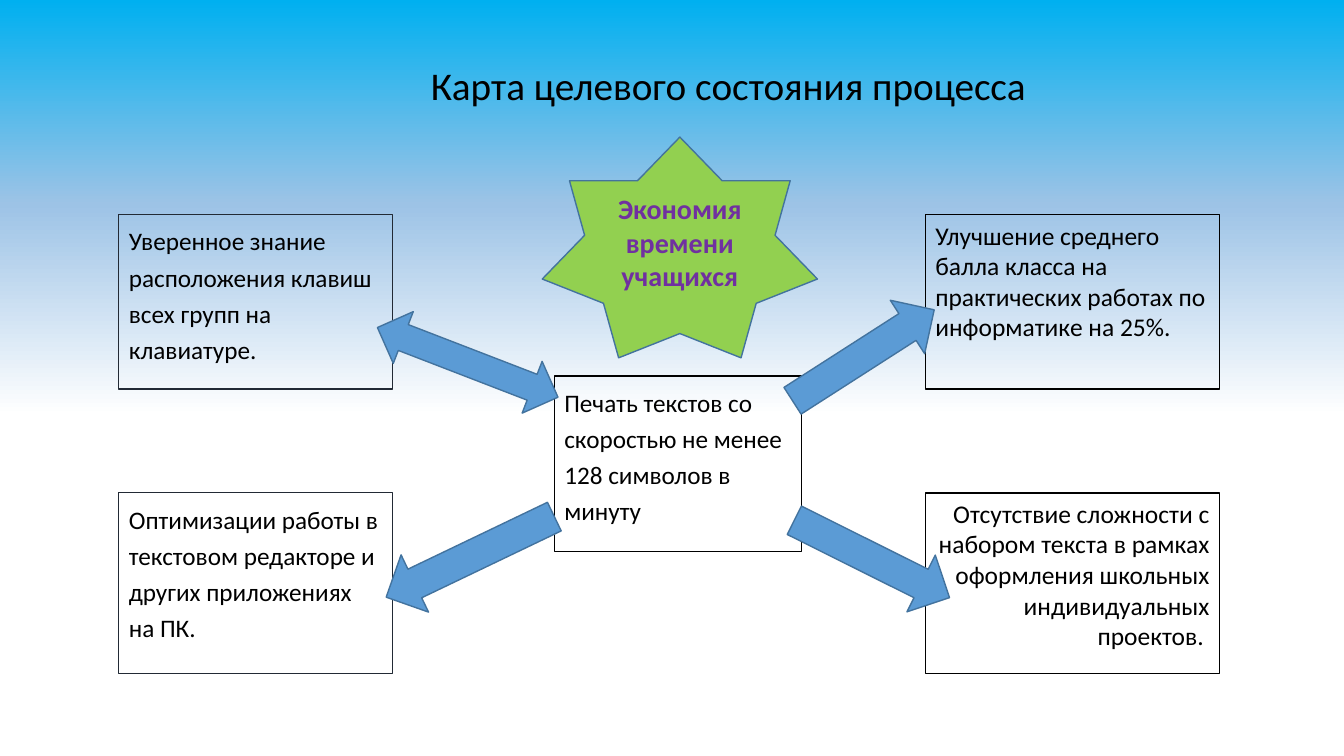
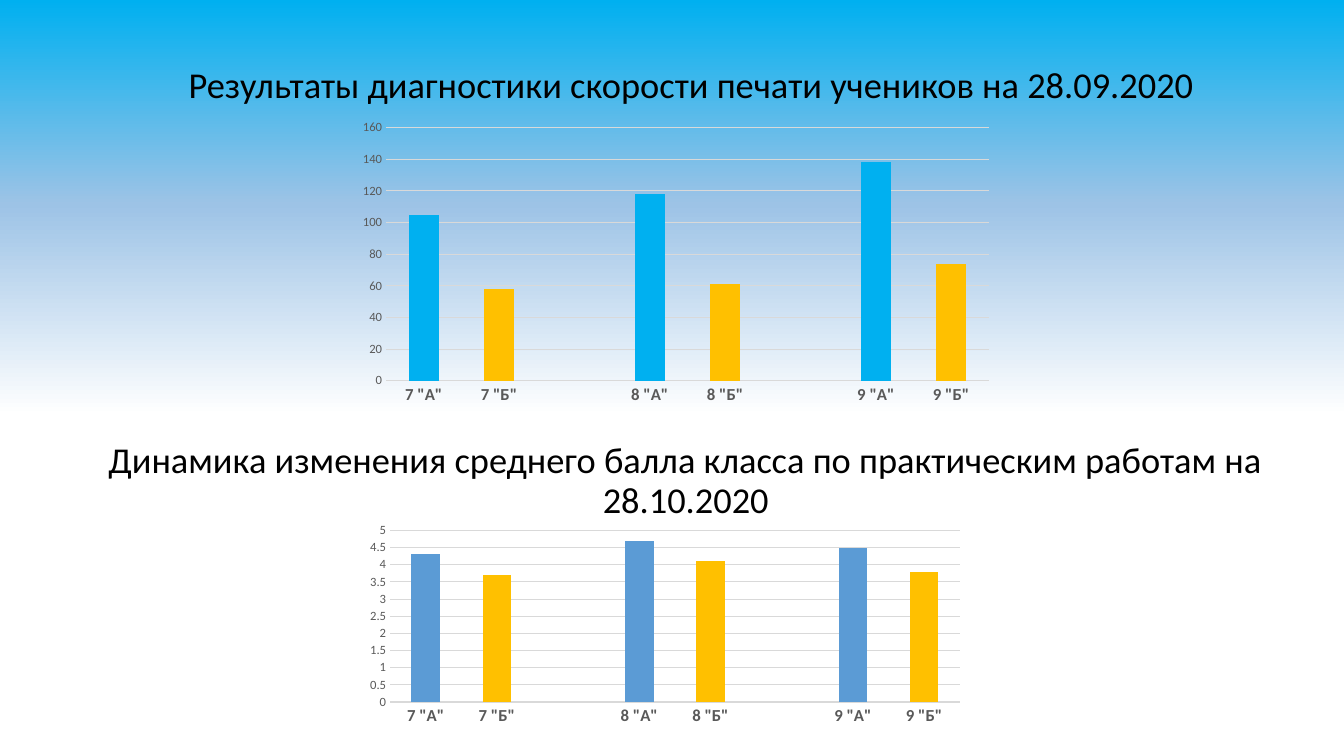
from dataclasses import dataclass

from lxml.etree import SubElement
from pptx import Presentation
from pptx.chart.data import CategoryChartData
from pptx.dml.color import RGBColor
from pptx.enum.chart import XL_CHART_TYPE as ChartType, XL_TICK_MARK as TickMark
from pptx.enum.shapes import MSO_SHAPE as Preset
from pptx.enum.text import MSO_ANCHOR as Anchor, MSO_AUTO_SIZE as AutoSize, PP_ALIGN as Align
from pptx.oxml.ns import qn
from pptx.util import Inches, Pt


@dataclass(frozen=True)
class Theme:
    font: str = "Calibri"
    black: str = "000000"
    navy: str = "222A35"
    sky: str = "00B0F0"
    blue: str = "5B9BD5"
    blue_edge: str = "43739E"
    green: str = "92D050"
    purple: str = "7030A0"
    amber: str = "FFC000"
    axis_text: str = "595959"
    gridline: str = "D9D9D9"
    background: tuple = ((0, "00B0F0"), (27, "9DC3E6"), (55, "FFFFFF"))
    title_size: float = 28
    heading_size: float = 26
    goal_size: float = 20
    card_size: float = 18
    result_size: float = 18.2
    category_size: float = 12
    value_size: float = 9


@dataclass(frozen=True)
class Box:
    left: float
    top: float
    width: float
    height: float

    def area(self, left, top, width, height):
        return Box(self.left + left, self.top + top, width, height)

    def place(self):
        return [Inches(cells * CELL) for cells in (self.left, self.top, self.width, self.height)]


THEME = Theme()
CELL = 0.1
PAGE = Box(0, 0, 133.33, 75)
TITLE_INDENT = 11


def color(value):
    return RGBColor.from_string(value)


def style_font(font, size, ink, bold=False):
    font.name = THEME.font
    font.size = Pt(size)
    font.bold = bold
    font.color.rgb = color(ink)


def write(shape, text, size=THEME.card_size, ink=THEME.black, bold=False, align=Align.LEFT,
          anchor=Anchor.TOP, spacing=1.0, before=6, indent=1):
    frame = shape.text_frame
    frame.word_wrap = True
    frame.auto_size = AutoSize.NONE
    frame.vertical_anchor = anchor
    frame.margin_left, frame.margin_right = Inches(indent * CELL), Inches(CELL)
    frame.margin_top = frame.margin_bottom = Inches(CELL / 2)
    paragraph = frame.paragraphs[0]
    paragraph.alignment = align
    paragraph.line_spacing = spacing
    paragraph.space_before = Pt(before)
    run = paragraph.add_run()
    run.text = text
    style_font(run.font, size, ink, bold)


def paint_background(master):
    fill = master.background.fill
    fill.gradient()
    fill.gradient_angle = 270
    stops = master.element.find(".//" + qn("a:gsLst"))
    for stop in list(stops):
        stops.remove(stop)
    for position, value in THEME.background:
        stop = SubElement(stops, qn("a:gs"), pos=str(position * 1000))
        SubElement(stop, qn("a:srgbClr"), val=value)


def add_titled_slide(presentation, title, box, **text_format):
    slide = presentation.slides.add_slide(presentation.slide_layouts[5])
    shape = slide.shapes.title
    shape.left, shape.top, shape.width, shape.height = box.place()
    write(shape, title, spacing=1.2, indent=TITLE_INDENT, **text_format)
    return slide


def add_figure(slide, preset, box, fill=None, edge=THEME.black, weight=1, rotation=0):
    shape = slide.shapes.add_shape(preset, *box.place())
    shape.shadow.inherit = False
    if fill:
        shape.fill.solid()
        shape.fill.fore_color.rgb = color(fill)
    else:
        shape.fill.background()
    shape.line.color.rgb = color(edge)
    shape.line.width = Pt(weight)
    shape.rotation = rotation
    return shape


def add_process_map(slide, box):
    left_width, right_width = 27.1, 29.2
    right = box.width - right_width
    upper, lower = (7.7, 17.3), (35.3, 17.9)
    skill = dict(edge=THEME.navy, weight=0.75)
    loose = dict(spacing=1.2)
    result = dict(size=THEME.result_size)
    cards = [
        ("Уверенное знание расположения клавиш всех групп на клавиатуре.",
         (0, upper[0], left_width, upper[1]), skill, loose),
        ("Оптимизации работы в текстовом редакторе и других приложениях на ПК.",
         (0, lower[0], left_width, lower[1]), skill, loose),
        ("Улучшение среднего балла класса на практических работах по информатике на 25%.",
         (right, upper[0], right_width, upper[1]), {}, result),
        ("Отсутствие сложности с набором текста в рамках оформления школьных "
         "индивидуальных проектов. ",
         (right, lower[0], right_width, lower[1]), {}, dict(result, align=Align.RIGHT)),
        ("Печать текстов со скоростью не менее 128 символов в минуту",
         (43.2, 23.7, 24.5, 17.4), {}, loose),
    ]
    for text, cells, outline, text_format in cards:
        card = add_figure(slide, Preset.RECTANGLE, box.area(*cells), **outline)
        write(card, text, **text_format)

    arrows = [
        (Preset.LEFT_RIGHT_ARROW, (25, 19.6, 19.2, 5.5), 21.1),
        (Preset.LEFT_ARROW, (25.6, 38.5, 18.5, 6.3), 334.4),
        (Preset.LEFT_ARROW, (66.1, 38.7, 17.2, 6.3), 206.5),
        (Preset.LEFT_ARROW, (65.5, 18.5, 16.7, 6.3), 147.3),
    ]
    for preset, cells, rotation in arrows:
        add_figure(slide, preset, box.area(*cells), THEME.blue, THEME.blue_edge, rotation=rotation)

    star = add_figure(slide, Preset.STAR_7_POINT, box.area(42, 0, 27.3, 21.9),
                      THEME.green, THEME.blue_edge)
    write(star, "Экономия времени учащихся", size=THEME.goal_size, ink=THEME.purple, bold=True,
          align=Align.CENTER, anchor=Anchor.MIDDLE, before=0)


def set_plot_area(chart, shares):
    plot_area = chart.element.find(".//" + qn("c:plotArea"))
    for old_layout in plot_area.findall(qn("c:layout")):
        plot_area.remove(old_layout)
    layout = SubElement(plot_area, qn("c:layout"))
    plot_area.insert(0, layout)
    manual = SubElement(layout, qn("c:manualLayout"))
    settings = [("layoutTarget", "inner"), ("xMode", "edge"), ("yMode", "edge")]
    settings += zip("xywh", shares)
    for name, value in settings:
        SubElement(manual, qn("c:" + name), val=str(value))


def add_class_chart(slide, box, kind, name, pairs, first_color, maximum, step, shares):
    categories, values, colors = [], [], []
    for grade, pair in pairs.items():
        if categories:
            categories.append("")
            values.append(None)
            colors.append(None)
        categories += [f'{grade} "А"', f'{grade} "Б"']
        values += pair
        colors += [first_color, THEME.amber]
    data = CategoryChartData()
    data.categories = categories
    data.add_series(name, values)
    chart = slide.shapes.add_chart(kind, *box.place(), data).chart
    chart.has_title = False
    chart.has_legend = False
    chart.font.name = THEME.font
    chart.font.size = Pt(10)
    chart.font.color.rgb = color(THEME.black)

    plot = chart.plots[0]
    plot.vary_by_categories = False
    plot.gap_width = 150
    series = plot.series[0]
    series.format.fill.solid()
    series.format.fill.fore_color.rgb = color(THEME.blue)
    for index, value in enumerate(colors):
        if value:
            fill = series.points[index].format.fill
            fill.solid()
            fill.fore_color.rgb = color(value)

    value_axis, category_axis = chart.value_axis, chart.category_axis
    for axis, size, bold in ((value_axis, THEME.value_size, False),
                             (category_axis, THEME.category_size, True)):
        axis.major_tick_mark = axis.minor_tick_mark = TickMark.NONE
        axis.format.line.fill.background()
        style_font(axis.tick_labels.font, size, THEME.axis_text, bold)
    value_axis.minimum_scale, value_axis.maximum_scale = 0, maximum
    value_axis.major_unit = step
    value_axis.has_major_gridlines = True
    gridlines = value_axis.major_gridlines.format.line
    gridlines.color.rgb = color(THEME.gridline)
    gridlines.width = Pt(0.75)
    set_plot_area(chart, shares)


def add_map_slide(presentation, page):
    slide = add_titled_slide(presentation, "Карта целевого состояния процесса",
                             page.area(11.8, 4.6, 110.9, 15.6),
                             size=THEME.title_size, align=Align.CENTER)
    add_process_map(slide, page.area(11.8, 13.6, 109.2, 53.2))


def add_results_slide(presentation, page):
    slide = add_titled_slide(presentation,
                             "Результаты диагностики скорости печати учеников на 28.09.2020",
                             page.area(7.7, 4.8, 119.5, 14.9), size=THEME.heading_size)
    heading = slide.shapes.add_textbox(*page.area(9, 43.4, 118.1, 11.2).place())
    write(heading,
          "Динамика изменения среднего балла класса по практическим работам на 28.10.2020",
          size=THEME.heading_size, align=Align.CENTER, spacing=0.9, before=10)
    add_class_chart(slide, page.area(34.3, 49.9, 62.8, 22.7), ChartType.COLUMN_STACKED,
                    "Средний балл", {7: (4.3, 3.7), 8: (4.7, 4.1), 9: (4.5, 3.8)},
                    THEME.blue, 5, 0.5, (0.07, 0.12, 0.9, 0.75))
    add_class_chart(slide, page.area(34.4, 11.5, 65, 29.2), ChartType.COLUMN_CLUSTERED,
                    "Скорость печати", {7: (105, 58), 8: (118, 61), 9: (138, 74)},
                    THEME.sky, 160, 20, (0.06, 0.04, 0.92, 0.86))


def main():
    presentation = Presentation()
    presentation.slide_width, presentation.slide_height = PAGE.place()[2:]
    paint_background(presentation.slide_master)
    add_map_slide(presentation, PAGE)
    add_results_slide(presentation, PAGE)
    presentation.save("out.pptx")


if __name__ == "__main__":
    main()
